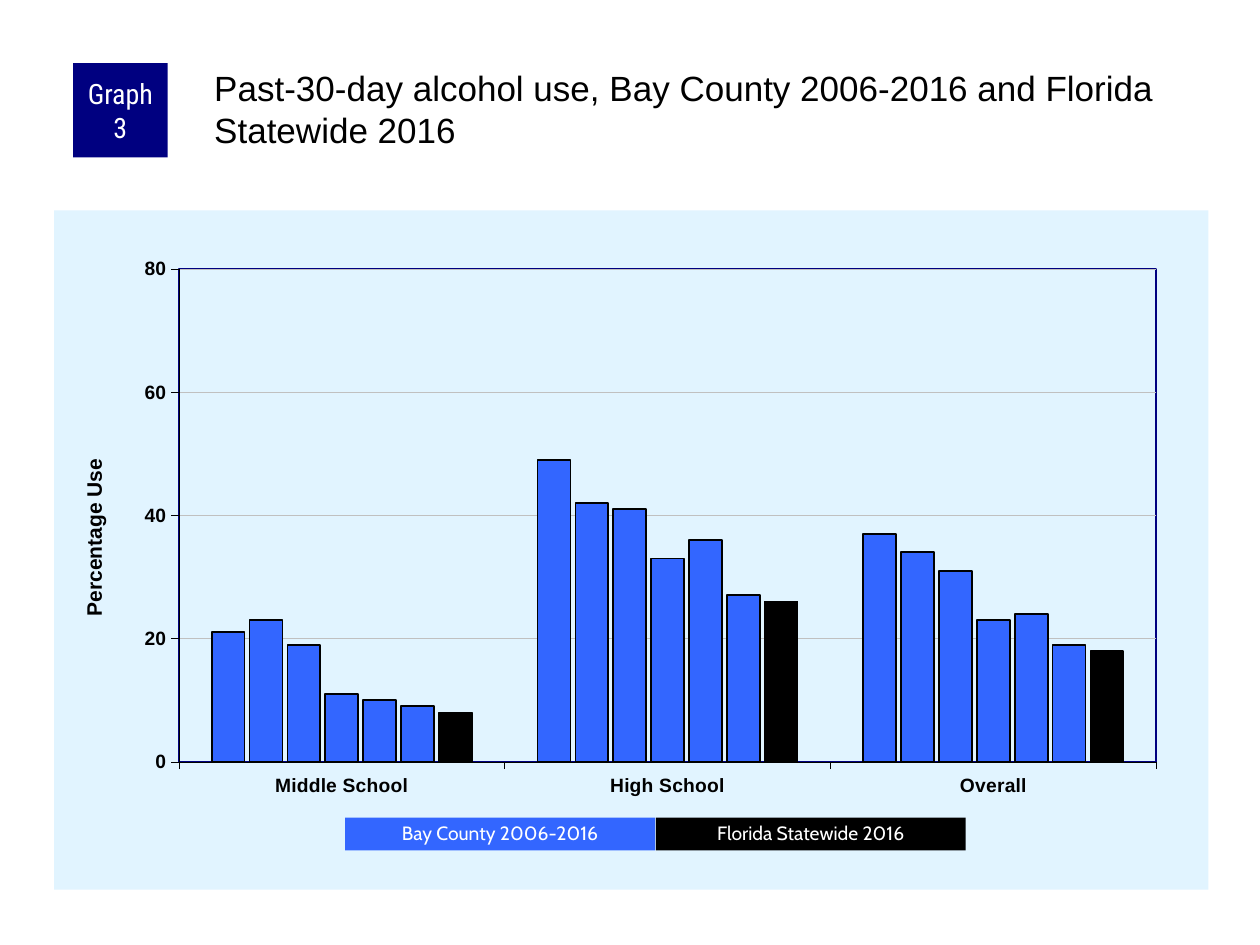
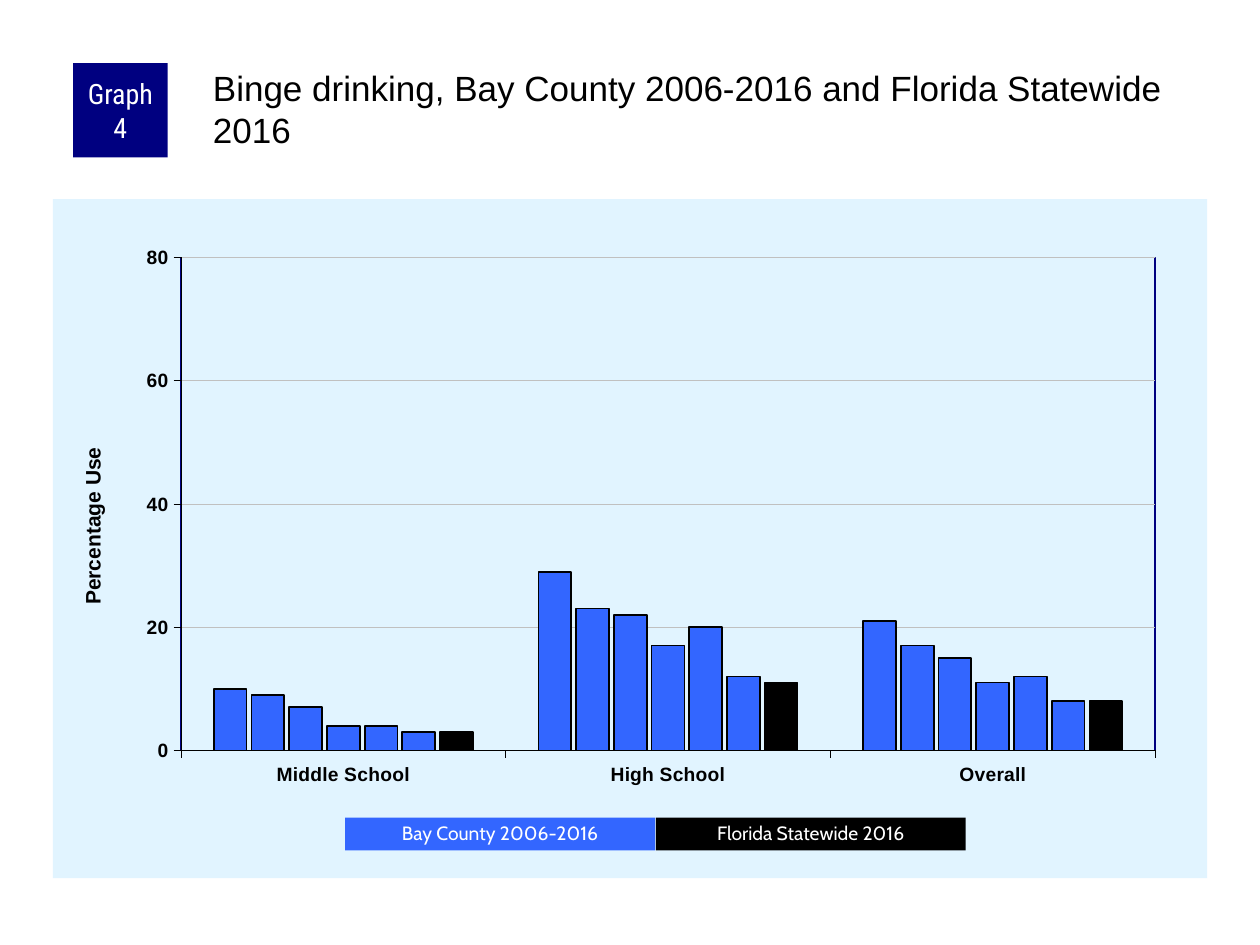
from pptx import Presentation
from pptx.chart.data import CategoryChartData
from pptx.dml.color import RGBColor
from pptx.enum.chart import XL_CHART_TYPE, XL_TICK_MARK
from pptx.enum.shapes import MSO_SHAPE
from pptx.enum.text import MSO_ANCHOR, PP_ALIGN
from pptx.oxml import parse_xml
from pptx.oxml.ns import nsdecls, qn
from pptx.util import Inches, Pt

COLUMN = XL_CHART_TYPE.COLUMN_CLUSTERED
TICK_OUT = XL_TICK_MARK.OUTSIDE
RECT = MSO_SHAPE.RECTANGLE
MIDDLE = MSO_ANCHOR.MIDDLE
CENTER = PP_ALIGN.CENTER

COLORS = {
    "county": "3366FF",
    "state": "000000",
    "badge": "000080",
    "panel": "E1F4FF",
    "grid": "C0C0C0",
    "text": "000000",
    "light": "FFFFFF",
}
LEVELS = ["Middle School", "High School", "Overall"]
LEGEND = [("Bay County 2006-2016", "county"), ("Florida Statewide 2016", "state")]
GRAPHS = [
    {
        "badge": "Graph 3",
        "title": "Past-30-day alcohol use, Bay County 2006-2016 and Florida Statewide 2016",
        "title_left": 1.67,
        "chart_at": (0.43, 1.67),
        "plot": (0.108, 0.847),
        "rates": [(21, 49, 37), (23, 42, 34), (19, 41, 31), (11, 33, 23),
                  (10, 36, 24), (9, 27, 19), (8, 26, 18)],
    },
    {
        "badge": "Graph 4",
        "title": "Binge drinking, Bay County 2006-2016 and Florida Statewide 2016",
        "title_left": 1.66,
        "chart_at": (0.42, 1.58),
        "plot": (0.111, 0.844),
        "rates": [(10, 29, 21), (9, 23, 17), (7, 22, 15), (4, 17, 11),
                  (4, 20, 12), (3, 12, 8), (3, 11, 8)],
    },
]


def rgb(name):
    return RGBColor.from_string(COLORS[name])


def style_font(font, size, color="text", name="Arial", bold=False):
    font.size = Pt(size)
    font.name = name
    font.bold = bold
    font.color.rgb = rgb(color)


def style_line(line, color, width):
    line.color.rgb = rgb(color)
    line.width = Pt(width)


def add_box(slide, box, text, fill, size, font, margins=(0.1, 0.05), spacing=None):
    s = slide.shapes.add_shape(RECT, *map(Inches, box))
    s.shadow.inherit = False
    s.fill.solid()
    s.fill.fore_color.rgb = rgb(fill)
    s.line.fill.background()
    tf = s.text_frame
    tf.word_wrap = True
    tf.vertical_anchor = MIDDLE
    tf.margin_left = tf.margin_right = Inches(margins[0])
    tf.margin_top = tf.margin_bottom = Inches(margins[1])
    tf.text = text
    p = tf.paragraphs[0]
    p.alignment = CENTER
    p.line_spacing = spacing
    style_font(p.runs[0].font, size, "light", font)


def add_title(slide, text, left):
    s = slide.shapes.add_textbox(Inches(left), Inches(0.5), Inches(7.92), Inches(0.83))
    tf = s.text_frame
    tf.word_wrap = True
    tf.margin_left = tf.margin_top = Inches(0.03)
    tf.margin_right = tf.margin_bottom = 0
    tf.text = text
    style_font(tf.paragraphs[0].runs[0].font, 20)


def set_layout(parent, index, **places):
    for old in parent.findall(qn("c:layout")):
        parent.remove(old)
    target = '<c:layoutTarget val="inner"/>' if "w" in places else ""
    modes = "".join(f'<c:{k}Mode val="edge"/>' for k in "xy")
    values = "".join(f'<c:{k} val="{v}"/>' for k, v in places.items())
    parent.insert(index, parse_xml(
        f'<c:layout {nsdecls("c")}><c:manualLayout>{target}{modes}{values}'
        "</c:manualLayout></c:layout>"))


def area_format(fill, line):
    return parse_xml(
        f'<c:spPr {nsdecls("c", "a")}>{fill}<a:ln w="12700">{line}</a:ln></c:spPr>')


def solid(color):
    return f'<a:solidFill><a:srgbClr val="{COLORS[color]}"/></a:solidFill>'


def style_axes(chart):
    for axis in (chart.category_axis, chart.value_axis):
        axis.major_tick_mark = TICK_OUT
        style_font(axis.tick_labels.font, 11, bold=True)
        style_line(axis.format.line, "text", 0.25)
    axis = chart.value_axis
    axis.minimum_scale, axis.maximum_scale, axis.major_unit = 0, 80, 20
    style_line(axis.major_gridlines.format.line, "grid", 0.25)
    tf = axis.axis_title.text_frame
    tf.text = "Percentage Use"
    style_font(tf.paragraphs[0].runs[0].font, 12, bold=True)
    set_layout(axis.axis_title.element, 1, x=0.02, y=0.36)


def add_use_chart(slide, rates, at, plot):
    data = CategoryChartData(number_format="0")
    data.categories = LEVELS
    for i, values in enumerate(rates, 1):
        data.add_series(f"Series {i}", values)
    left, top = at
    chart = slide.shapes.add_chart(
        COLUMN, Inches(left), Inches(top), Inches(9.16), Inches(5.39), data).chart
    chart.has_legend = False
    chart.has_title = False
    style_font(chart.font, 8)
    style_axes(chart)

    bars = chart.plots[0]
    bars.gap_width = 200
    bars.overlap = -15
    bars.vary_by_categories = False
    for i, series in enumerate(bars.series, 1):
        series.invert_if_negative = False
        series.format.fill.solid()
        series.format.fill.fore_color.rgb = rgb("state" if i == len(rates) else "county")
        style_line(series.format.line, "text", 1)

    chart_xml = chart.element.find(qn("c:chart"))
    plot_area = chart_xml.find(qn("c:plotArea"))
    plot_left, plot_width = plot
    set_layout(plot_area, 0, x=plot_left, y=0.086, w=plot_width, h=0.726)
    plot_area.append(area_format("<a:noFill/>", solid("badge")))
    chart_xml.addnext(area_format(solid("panel"), "<a:noFill/>"))


def add_legend(slide):
    for i, (label, color) in enumerate(LEGEND):
        add_box(slide, (2.74 + i * 2.465, 6.49, 2.46, 0.26), label, color, 11, "Cabin",
                spacing=0.9)


def add_graph_slide(prs, graph):
    slide = prs.slides.add_slide(prs.slide_layouts[6])
    add_use_chart(slide, graph["rates"], graph["chart_at"], graph["plot"])
    add_box(slide, (0.58, 0.5, 0.75, 0.75), graph["badge"], "badge", 16,
            "Roboto Condensed", margins=(0.05, 0))
    add_title(slide, graph["title"], graph["title_left"])
    add_legend(slide)


def main():
    prs = Presentation()
    prs.slide_width = Inches(10)
    prs.slide_height = Inches(7.5)
    for graph in GRAPHS:
        add_graph_slide(prs, graph)
    prs.save("out.pptx")


if __name__ == "__main__":
    main()
